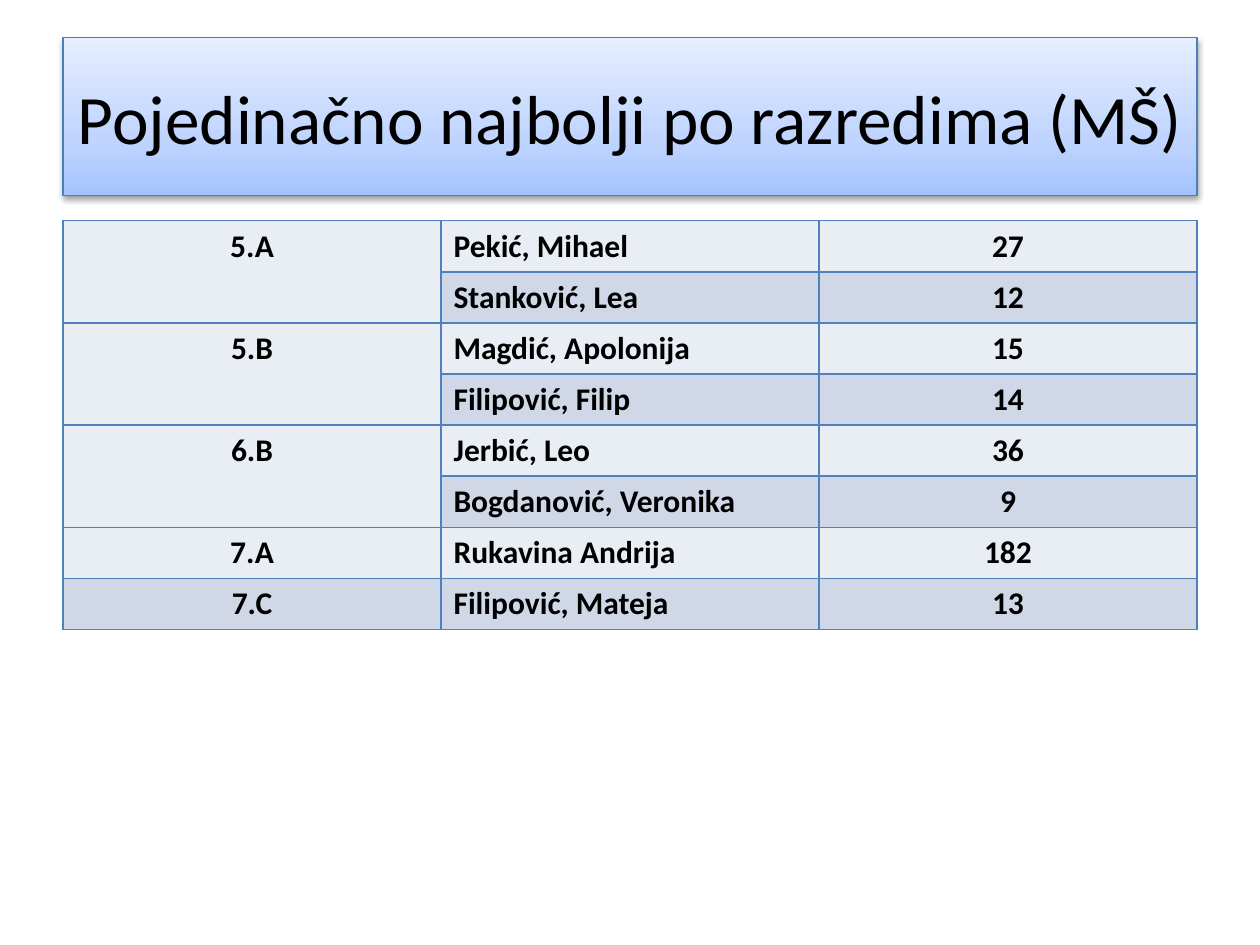
from lxml.etree import SubElement
from pptx import Presentation
from pptx.dml.color import RGBColor
from pptx.enum.text import MSO_ANCHOR, MSO_AUTO_SIZE, PP_ALIGN
from pptx.oxml.ns import qn
from pptx.util import Cm, Pt

FONT = "Calibri"
BLACK = "000000"
BORDER = "4F81BD"
BANDS = ("E9EDF4", "D0D8E8")
TITLE_STOPS = ((0, "A4C4FF"), (35, "BFD4FF"), (100, "E6EEFF"))
RESULTS = (
    ("5.A", (("Pekić, Mihael", 27), ("Stanković, Lea", 12))),
    ("5.B", (("Magdić, Apolonija", 15), ("Filipović, Filip", 14))),
    ("6.B", (("Jerbić, Leo", 36), ("Bogdanović, Veronika", 9))),
    ("7.A", (("Rukavina Andrija", 182),)),
    ("7.C", (("Filipović, Mateja", 13),)),
)


def color(value):
    """Turn a hex string into a colour."""
    return RGBColor.from_string(value)


def add_color(parent, value):
    """Add a hex colour element to an XML parent."""
    return SubElement(parent, qn("a:srgbClr"), val=value)


def write(frame, text, size=18, bold=False, align=PP_ALIGN.LEFT, fill=BLACK):
    """Write one formatted paragraph into a text frame."""
    para = frame.paragraphs[0]
    para.alignment = align
    span = para.add_run()
    span.text = text
    span.font.name = FONT
    span.font.size = Pt(size)
    span.font.bold = bold
    span.font.color.rgb = color(fill)


def set_gradient(shape, stops, angle):
    """Fill a shape with a linear gradient of (percent, hex) stops."""
    shape.fill.gradient()
    shape.fill.gradient_angle = angle
    stop_list = shape.fill._fill._gradFill.find(qn("a:gsLst"))
    stop_list.clear()
    for percent, value in stops:
        stop = SubElement(stop_list, qn("a:gs"), pos=str(percent * 1000))
        add_color(stop, value)


def set_shadow(shape, blur, distance, opacity):
    """Give a shape a black shadow falling straight down."""
    shape.shadow.inherit = False
    effects = shape._element.spPr.find(qn("a:effectLst"))
    shadow = SubElement(
        effects, qn("a:outerShdw"), blurRad=str(Pt(blur)),
        dist=str(Pt(distance)), dir="5400000", rotWithShape="0")
    SubElement(add_color(shadow, BLACK), qn("a:alpha"), val=str(opacity * 1000))


def set_borders(cell, value, width):
    """Draw all four borders of a table cell."""
    properties = cell._tc.get_or_add_tcPr()
    for index, side in enumerate(("lnL", "lnR", "lnT", "lnB")):
        line = SubElement(properties, qn(f"a:{side}"), w=str(Pt(width)))
        add_color(SubElement(line, qn("a:solidFill")), value)
        properties.insert(index, line)


def place_title(page, text, left, top, width, height):
    """Place the title banner in the given box."""
    box = page.shapes.title
    box.left, box.top, box.width, box.height = left, top, width, height
    set_gradient(box, TITLE_STOPS, 90)
    box.line.color.rgb = color("4B7EBC")
    box.line.width = Pt(0.75)
    set_shadow(box, 3.1, 1.6, 38)
    frame = box.text_frame
    frame.word_wrap = True
    frame.auto_size = MSO_AUTO_SIZE.NONE
    frame.vertical_anchor = MSO_ANCHOR.MIDDLE
    write(frame, text, size=39.6, align=PP_ALIGN.CENTER)


def place_results(page, results, left, top, width, height):
    """Place the table of best pupils, one merged class cell per group."""
    count = sum(len(pupils) for _, pupils in results)
    table = page.shapes.add_table(count, 3, left, top, width, height).table
    table.first_row = False
    for index in range(count):
        for cell in table.rows[index].cells:
            cell.fill.solid()
            cell.fill.fore_color.rgb = color(BANDS[index % 2])
            set_borders(cell, BORDER, 1)
    row = 0
    for group, pupils in results:
        first = table.cell(row, 0)
        if len(pupils) > 1:
            first.merge(table.cell(row + len(pupils) - 1, 0))
        write(first.text_frame, group, bold=True, align=PP_ALIGN.CENTER)
        for name, points in pupils:
            write(table.cell(row, 1).text_frame, name, bold=True)
            write(table.cell(row, 2).text_frame, str(points), bold=True,
                  align=PP_ALIGN.CENTER)
            row += 1


def main():
    """Build the deck and save it."""
    deck = Presentation()
    deck.slide_width, deck.slide_height = Cm(25.4), Cm(19.05)
    page = deck.slides.add_slide(deck.slide_layouts[5])
    left, width = Cm(1.27), Cm(22.86)
    place_title(page, "Pojedinačno najbolji po razredima (MŠ)",
                left, Cm(0.76), width, Cm(3.18))
    place_results(page, RESULTS, left, Cm(4.45), width, Cm(8.24))
    deck.save("out.pptx")


if __name__ == "__main__":
    main()
